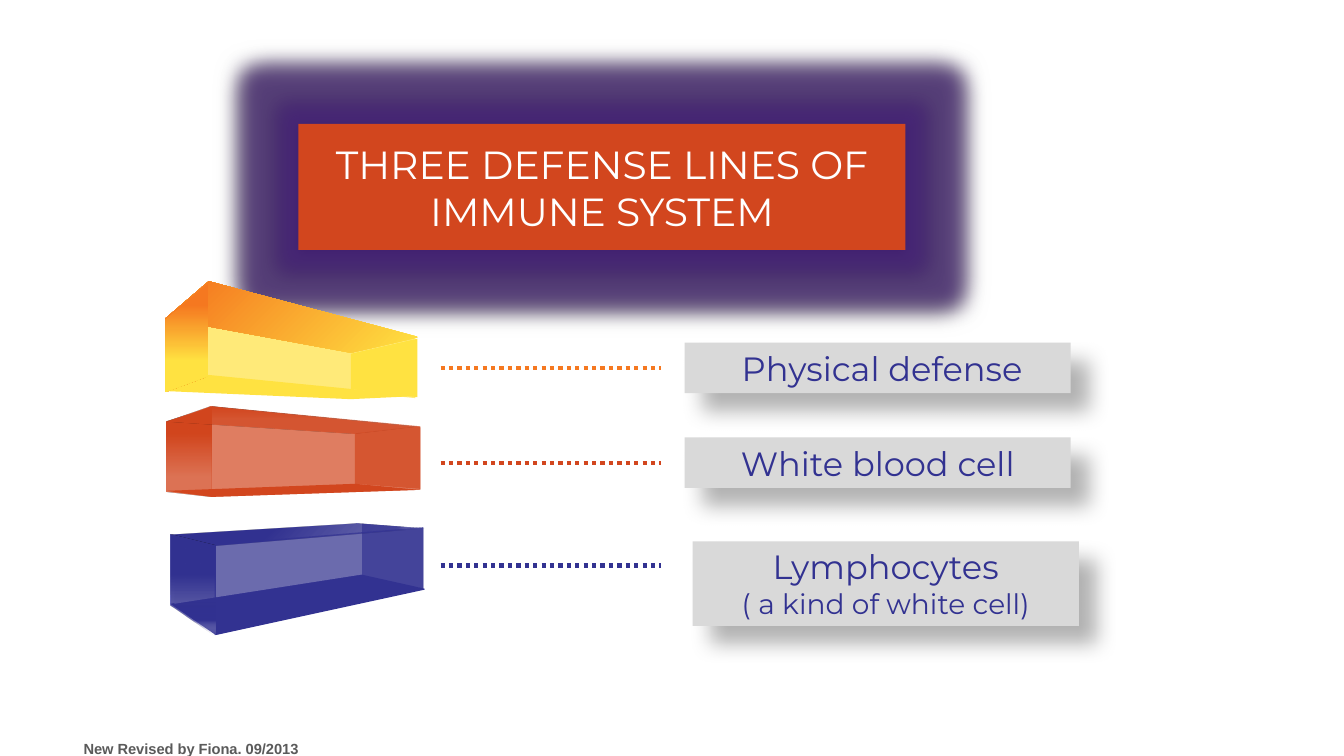
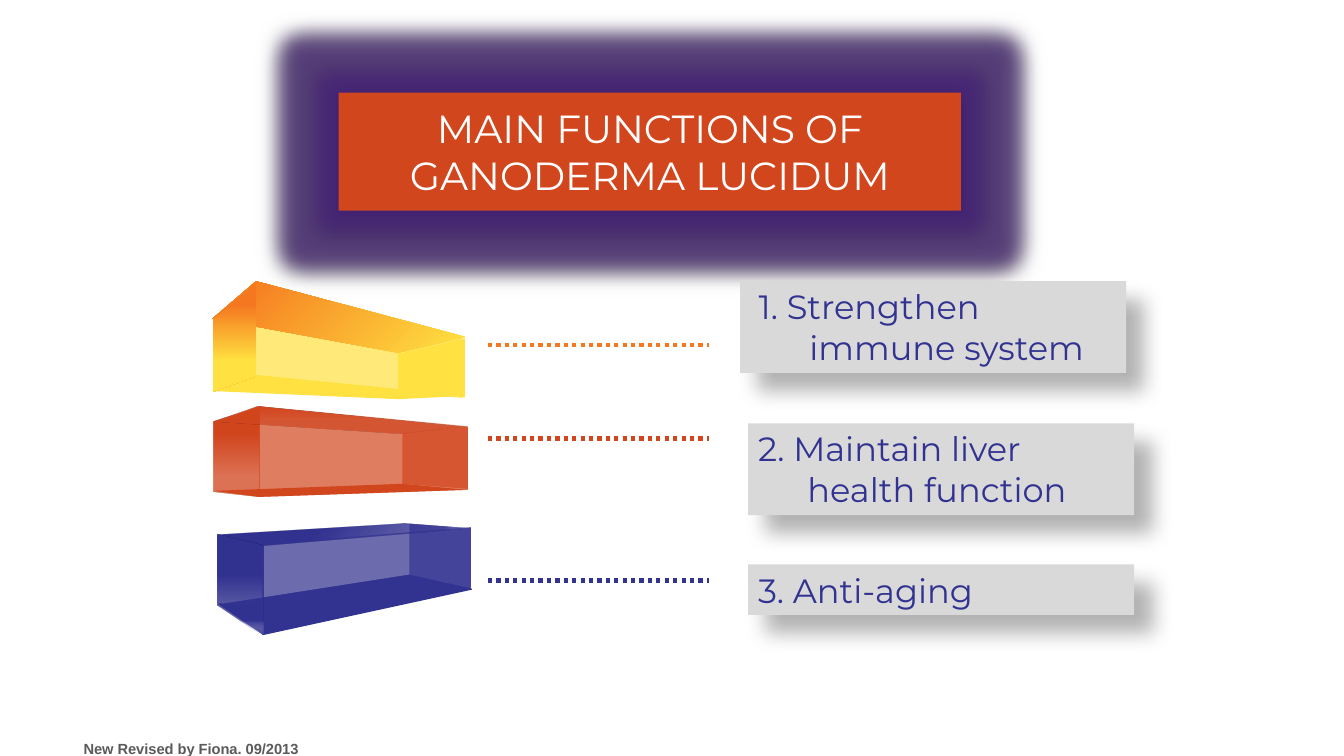
"""Build two slides that link three perspective blocks to their labels."""
from dataclasses import dataclass
from typing import Any, NamedTuple, Optional

from lxml import etree
from pptx import Presentation
from pptx import util as u
from pptx.dml import color as dml_color
from pptx.enum import dml, shapes, text
from pptx.oxml import ns

COLORS = {
    "yellow": "FFE241", "orange": "F57820", "red": "D2461E", "blue": "323291",
    "pale": "F2F2F2", "label": "D9D9D9", "white": "FFFFFF", "black": "000000",
    "footer": "5A5A5A", "glow": "4C2683",
}
FONT = "Montserrat"
LABEL_WIDTH = 3.83
LINE_LENGTH = 2.19
LINE_COLORS = ("orange", "red", "blue")


class Stop(NamedTuple):
    color: str
    position: int = 0
    alpha: int = 100


class Paint(NamedTuple):
    stops: tuple[Stop, ...]
    angle: Optional[int] = None


class Facet(NamedTuple):
    paint: Paint
    points: tuple[tuple[float, float], ...]


class Box(NamedTuple):
    left: float
    top: float
    width: float
    height: float


class Line(NamedTuple):
    text: str
    size: float = 24


class Shadow(NamedTuple):
    alpha: int
    blur: float
    distance: float
    angle: int


@dataclass(frozen=True)
class Label:
    left: float
    top: float
    height: float
    line_top: float
    lines: tuple[Line, ...]
    indent: float = 0


@dataclass(frozen=True)
class Page:
    title: tuple[Line, ...]
    title_box: Box
    shift: float
    align: Any
    labels: tuple[Label, ...]


TITLE_SHADOW = Shadow(100, 8.5, 1, 90)
LABEL_SHADOW = Shadow(30, 15, 18, 45)


def solid(color: str, alpha: int = 100) -> Paint:
    """Return a paint of one colour."""
    return Paint((Stop(color, 0, alpha),))


BLUE_FADE = (Stop("blue", 39), Stop("blue", 84, 70), Stop("white", 100, 0))
BLUE_GLASS = solid("blue", 70)
RED_GLASS = solid("red", 70)

FACETS = (
    Facet(solid("blue"), ((3.54, 5.69), (1.69, 5.99), (2.14, 6.3), (4.21, 5.85), (4.21, 5.84))),
    Facet(BLUE_GLASS, ((4.2, 5.84), (4.2, 5.24), (3.53, 5.19), (3.53, 5.7))),
    Facet(solid("pale"), ((3.59, 5.7), (3.59, 5.19), (1.73, 5.31), (1.73, 5.99))),
    Facet(Paint(BLUE_FADE, 45), ((3.54, 5.19), (1.69, 5.3), (2.14, 5.41), (4.21, 5.24))),
    Facet(BLUE_GLASS, ((2.13, 6.3), (4.2, 5.84), (4.2, 5.23), (2.13, 5.4))),
    Facet(Paint(BLUE_FADE, 90), ((1.69, 5.3), (1.69, 6), (2.14, 6.31), (2.14, 5.41))),
    Facet(Paint((Stop("red", 29), Stop("red", 78, 75)), 90),
          ((2.09, 4.04), (1.65, 4.18), (1.65, 4.88), (2.1, 4.93), (2.1, 4.04))),
    Facet(RED_GLASS, ((4.17, 4.23), (2.1, 4.03), (2.1, 4.93), (4.17, 4.86))),
    Facet(Paint((Stop("red"), Stop("red", 48, 70)), 90),
          ((3.51, 4.3), (4.12, 4.23), (2.09, 4.03), (1.65, 4.18))),
    Facet(RED_GLASS, ((4.17, 4.24), (4.13, 4.23), (3.52, 4.3), (3.52, 4.8), (4.17, 4.85))),
    Facet(solid("red"), ((1.65, 4.87), (2.1, 4.93), (4.16, 4.86), (3.52, 4.8))),
    Facet(solid("yellow", 70), ((2.05, 2.82), (2.05, 3.74), (4.12, 3.95), (4.12, 3.37))),
    Facet(Paint((Stop("yellow"), Stop("orange", 7), Stop("yellow", 100))),
          ((3.48, 3.5), (4.14, 3.35), (4.14, 3.34), (2.07, 2.79), (1.64, 3.16))),
    Facet(solid("yellow"), ((4.14, 3.36), (3.48, 3.51), (3.48, 3.86), (4.14, 3.94))),
    Facet(solid("yellow"),
          ((1.64, 3.88), (2.07, 3.72), (3.49, 3.86), (4.12, 3.93), (3.48, 3.96))),
    Facet(Paint((Stop("orange", 20), Stop("yellow", 72), Stop("yellow", 100)), 90),
          ((1.64, 3.17), (1.64, 3.89), (2.07, 3.73), (2.07, 2.81))),
)

PAGES = (
    Page((Line("THREE DEFENSE LINES OF", 28), Line("IMMUNE SYSTEM", 28)),
         Box(2.96, 1.23, 6.02, 1.25), 0, text.PP_ALIGN.CENTER, (
             Label(6.79, 3.4, 0.5, 3.65, (Line(" Physical defense"),)),
             Label(6.79, 4.34, 0.5, 4.59, (Line("White blood cell"),)),
             Label(6.87, 5.37, 0.84, 5.61,
                   (Line("Lymphocytes"), Line("( a kind of white cell)", 20))))),
    Page((Line("MAIN FUNCTIONS OF GANODERMA LUCIDUM", 28),),
         Box(3.36, 0.92, 6.17, 1.17), 0.47, text.PP_ALIGN.LEFT, (
             Label(7.34, 2.79, 0.91, 3.42, (Line(" 1. Strengthen immune system"),), 0.59),
             Label(7.42, 4.2, 0.91, 4.35, (Line("2. Maintain liver health function"),), 0.49),
             Label(7.42, 5.6, 0.5, 5.76, (Line("3. Anti-aging"),), 0.49))),
)


def rgb(name: str) -> dml_color.RGBColor:
    """Return a palette colour."""
    return dml_color.RGBColor.from_string(COLORS[name])


def apply(target: Any, values: dict[str, Any]) -> None:
    """Set each named attribute on the target."""
    for name, value in values.items():
        setattr(target, name, value)


def add_node(parent: Any, tag: str, **attributes: Any) -> Any:
    """Append a DrawingML element."""
    values = {name: str(value) for name, value in attributes.items()}
    return etree.SubElement(parent, ns.qn(f"a:{tag}"), values)


def add_color(parent: Any, name: str, alpha: int) -> None:
    """Append a colour with its opacity."""
    node = add_node(parent, "srgbClr", val=COLORS[name])
    if alpha < 100:
        add_node(node, "alpha", val=alpha * 1000)


def paint_shape(shape: Any, paint: Paint) -> None:
    """Fill a shape without outline or inherited shadow."""
    shape.shadow.inherit = False
    shape.line.fill.background()
    if len(paint.stops) == 1:
        stop = paint.stops[0]
        shape.fill.solid()
        fill = shape.element.spPr.find(ns.qn("a:solidFill"))
        add_color(fill, stop.color, stop.alpha)
        return
    shape.fill.gradient()
    fill = shape.element.spPr.find(ns.qn("a:gradFill"))
    for child in list(fill):
        fill.remove(child)
    stop_list = add_node(fill, "gsLst")
    for stop in paint.stops:
        node = add_node(stop_list, "gs", pos=stop.position * 1000)
        add_color(node, stop.color, stop.alpha)
    if paint.angle is None:
        circle = add_node(fill, "path", path="circle")
        add_node(circle, "fillToRect", r=100000, b=100000)
    else:
        add_node(fill, "lin", ang=paint.angle * 60000, scaled=0)


def add_effects(shape: Any, shadow: Shadow, glow: float = 0) -> None:
    """Add an outer shadow and an optional glow."""
    effects = shape.element.spPr.find(ns.qn("a:effectLst"))
    if glow:
        add_color(add_node(effects, "glow", rad=u.Inches(glow)), "glow", 60)
    node = add_node(effects, "outerShdw", blurRad=u.Pt(shadow.blur), dist=u.Pt(shadow.distance),
                    dir=shadow.angle * 60000, algn="ctr", rotWithShape=0)
    add_color(node, "black", shadow.alpha)


def write(shape: Any, lines: tuple[Line, ...], color: str, align: Any, anchor: Any,
          indent: float = 0, font: str = FONT, bold: bool = False) -> None:
    """Write the lines into a shape, one paragraph each."""
    frame = shape.text_frame
    apply(frame, {"word_wrap": True, "vertical_anchor": anchor})
    for index, line in enumerate(lines):
        paragraph = frame.add_paragraph() if index else frame.paragraphs[0]
        paragraph.alignment = align
        if indent:
            properties = paragraph._p.get_or_add_pPr()
            properties.set("marL", str(u.Inches(indent)))
            properties.set("indent", str(-u.Inches(indent)))
        run = paragraph.add_run()
        run.text = line.text
        apply(run.font, {"name": font, "size": u.Pt(line.size), "bold": bold})
        run.font.color.rgb = rgb(color)


def add_box(slide: Any, box: Box, color: str) -> Any:
    """Add a plain filled rectangle."""
    shape = slide.shapes.add_shape(shapes.MSO_SHAPE.RECTANGLE, *map(u.Inches, box))
    paint_shape(shape, solid(color))
    return shape


def add_title(slide: Any, page: Page) -> None:
    """Add the glowing title panel."""
    shape = add_box(slide, page.title_box, "red")
    add_effects(shape, TITLE_SHADOW, glow=0.4)
    write(shape, page.title, "white", text.PP_ALIGN.CENTER, text.MSO_ANCHOR.MIDDLE)


def add_blocks(slide: Any, shift: float) -> None:
    """Draw the three blocks as one group."""
    group = slide.shapes.add_group_shape()
    for facet in FACETS:
        points = [(u.Inches(x + shift), u.Inches(y)) for x, y in facet.points]
        builder = group.shapes.build_freeform(*points[0])
        builder.add_line_segments(points[1:], close=True)
        paint_shape(builder.convert_to_shape(), facet.paint)


def add_dotted_line(slide: Any, left: float, top: float, color: str) -> None:
    """Add a dotted line from a block towards its label."""
    connector = slide.shapes.add_connector(
        shapes.MSO_CONNECTOR.STRAIGHT,
        *map(u.Inches, (left, top, left + LINE_LENGTH, top)))
    connector.line.color.rgb = rgb(color)
    apply(connector.line, {"width": u.Pt(3), "dash_style": dml.MSO_LINE.ROUND_DOT})
    add_node(connector.element.spPr, "effectLst")


def add_label(slide: Any, label: Label, align: Any) -> None:
    """Add a shadowed label."""
    shape = add_box(slide, Box(label.left, label.top, LABEL_WIDTH, label.height), "label")
    add_effects(shape, LABEL_SHADOW)
    write(shape, label.lines, "blue", align, text.MSO_ANCHOR.TOP, label.indent)


def add_footer(slide: Any) -> None:
    """Add the revision note."""
    shape = slide.shapes.add_textbox(*map(u.Inches, Box(0.73, 7.29, 5.42, 0.29)))
    write(shape, (Line("New Revised by Fiona. 09/2013", 10.5),), "footer",
          text.PP_ALIGN.LEFT, text.MSO_ANCHOR.TOP, font="Arial", bold=True)


def main() -> None:
    """Build and save the presentation."""
    presentation = Presentation()
    apply(presentation, {"slide_width": u.Inches(13.33), "slide_height": u.Inches(7.5)})
    for page in PAGES:
        slide = presentation.slides.add_slide(presentation.slide_layouts[6])
        add_footer(slide)
        add_title(slide, page)
        add_blocks(slide, page.shift)
        for label, color in zip(page.labels, LINE_COLORS):
            add_dotted_line(slide, 4.37 + page.shift, label.line_top, color)
        for label in page.labels:
            add_label(slide, label, page.align)
    presentation.save("out.pptx")


if __name__ == "__main__":
    main()
